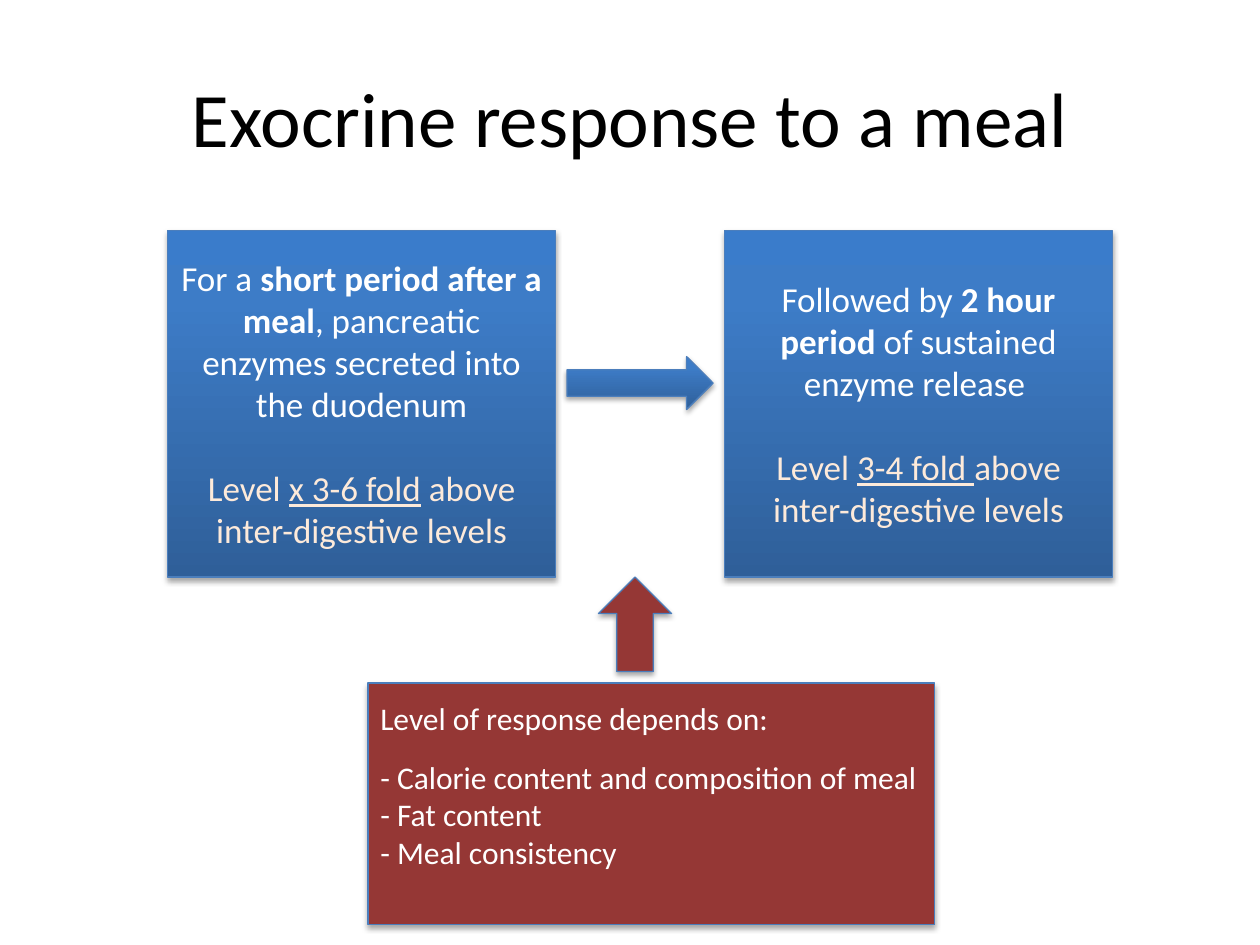
from copy import deepcopy
from lxml.etree import SubElement
from pptx import Presentation
from pptx.dml.color import RGBColor
from pptx.enum.shapes import MSO_SHAPE as SHAPE
from pptx.enum.text import MSO_ANCHOR as ANCHOR, PP_ALIGN as ALIGN
from pptx.oxml.ns import qn
from pptx.util import Inches, Pt

WHITE, CREAM, RED, EDGE = "FFFFFF", "FDEADA", "953735", "4B7EBC"
BLUE = [(0, "2F5F99"), (0.8, "3D7CC7"), (1, "3A7CCB")]
BOLD, UNDER = {"bold": True}, {"underline": True}

TITLE = "Exocrine response to a meal"
PHASES = [
    [(WHITE, [("For a ", {}), ("short period after a meal", BOLD),
              (", pancreatic enzymes secreted into the duodenum", {})]),
     (CREAM, [("Level ", {}), ("x 3-6 fold", UNDER),
              (" above inter-digestive levels", {})])],
    [(WHITE, [("Followed by ", {}), ("2 hour period ", BOLD),
              ("of sustained enzyme release ", {})]),
     (CREAM, [("Level ", {}), ("3-4 fold ", UNDER),
              ("above inter-digestive levels", {})])],
]
FACTORS = ["Level of response depends on:",
           "- Calorie content and composition of meal",
           "- Fat content", "- Meal consistency"]

LEFT, TOP, BOX_W, BOX_H, STEP = 1.33, 1.83, 3.08, 2.75, 4.42
GAP = 0.09
BOTTOM = TOP + BOX_H


def rgb(value):
    return RGBColor.from_string(value)


def add_shadow(sp):
    sp.shadow.inherit = False
    effects = sp._element.spPr.find(qn("a:effectLst"))
    shadow = SubElement(effects, qn("a:outerShdw"), blurRad=str(Pt(3.1)),
                        dist=str(Pt(1.8)), dir="5400000", rotWithShape="0")
    color = SubElement(shadow, qn("a:srgbClr"), val="000000")
    SubElement(color, qn("a:alpha"), val="35000")


def fill_gradient(sp, stops):
    sp.fill.gradient()
    sp.fill.gradient_angle = 90
    stop_list = sp._element.spPr.find(".//" + qn("a:gsLst"))
    stop_list.append(deepcopy(stop_list[-1]))
    for stop, (position, color) in zip(sp.fill.gradient_stops, stops):
        stop.position = position
        stop.color.rgb = rgb(color)


def add_block(slide, kind, box, fill):
    sp = slide.shapes.add_shape(kind, *map(Inches, box))
    if fill is BLUE:
        fill_gradient(sp, fill)
    else:
        sp.fill.solid()
        sp.fill.fore_color.rgb = rgb(fill)
    sp.line.color.rgb = rgb(EDGE)
    sp.line.width = Pt(0.75)
    add_shadow(sp)
    return sp


def write(sp, paragraphs, size, align, gap=0):
    tf = sp.text_frame
    tf.word_wrap = True
    tf.vertical_anchor = ANCHOR.MIDDLE
    for i, (color, runs) in enumerate(paragraphs):
        p = tf.paragraphs[0] if i == 0 else tf.add_paragraph()
        p.alignment = align
        if i == 1:
            p.space_before = Pt(gap)
        for text, style in runs:
            r = p.add_run()
            r.text = text
            r.font.color.rgb = rgb(color)
            for key, value in {"name": "Calibri", "size": Pt(size), **style}.items():
                setattr(r.font, key, value)


def main():
    prs = Presentation()
    prs.slide_width, prs.slide_height = Inches(10), Inches(7.5)
    slide = prs.slides.add_slide(prs.slide_layouts[6])

    title = slide.shapes.add_textbox(*map(Inches, (0.5, 0.3, 9, 1.25)))
    write(title, [("000000", [(TITLE, {})])], 44, ALIGN.CENTER)

    for i, phase in enumerate(PHASES):
        box = (LEFT + i * STEP, TOP, BOX_W, BOX_H)
        write(add_block(slide, SHAPE.RECTANGLE, box, BLUE),
              phase, 20, ALIGN.CENTER, gap=24)

    add_block(slide, SHAPE.RIGHT_ARROW,
              (LEFT + BOX_W + GAP, 2.83, STEP - BOX_W - 2 * GAP, 0.42), BLUE)

    factors = add_block(slide, SHAPE.RECTANGLE,
                        (2.92, BOTTOM + 0.84, 4.5, 1.92), RED)
    factors.text_frame.margin_bottom = Inches(0.35)
    write(factors, [(WHITE, [(line, {})]) for line in FACTORS],
          18, ALIGN.LEFT, gap=12)

    add_block(slide, SHAPE.UP_ARROW, (4.75, BOTTOM, 0.58, 0.75), RED)
    prs.save("out.pptx")


if __name__ == "__main__":
    main()
